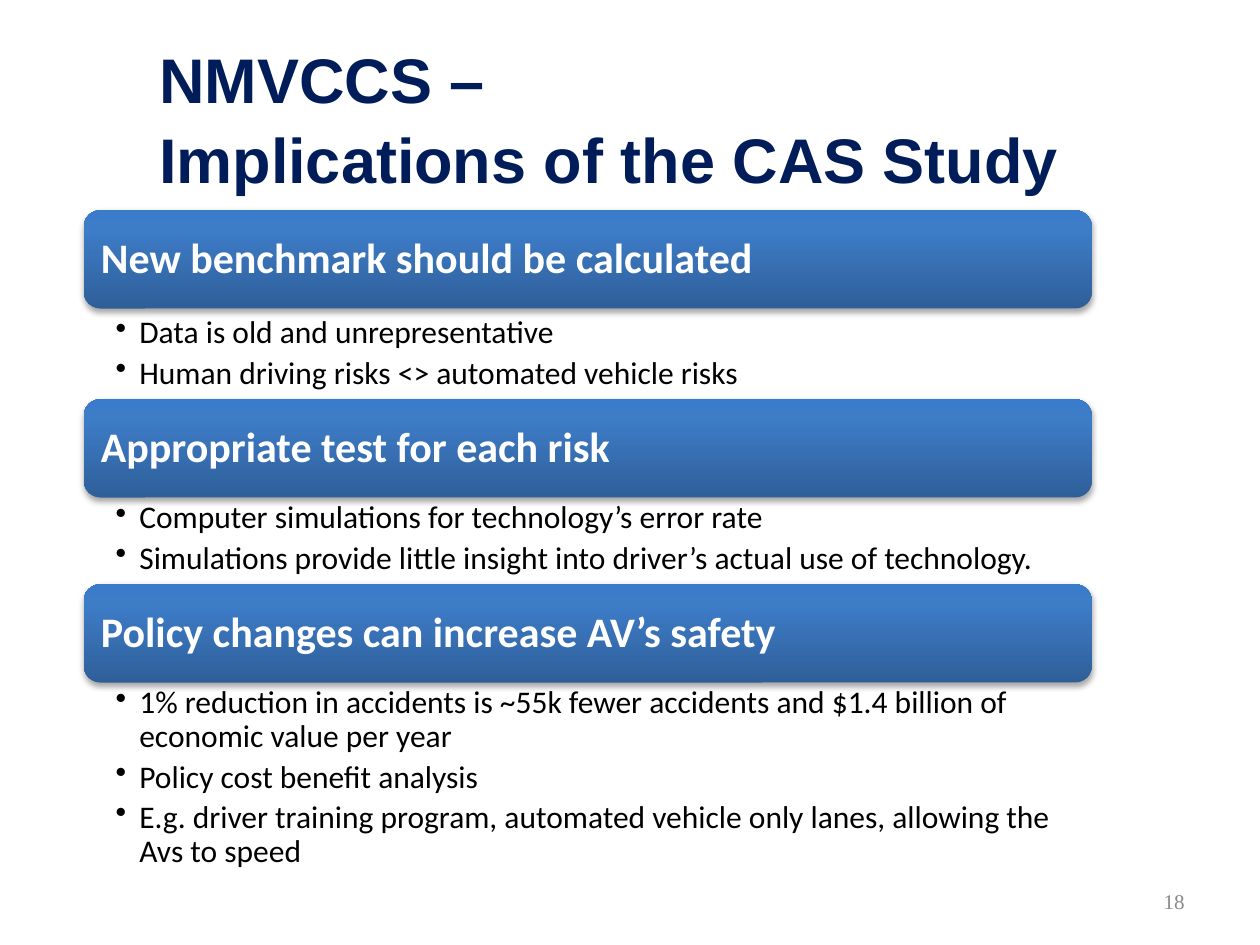
from lxml import etree
from pptx import Presentation
from pptx.dml.color import RGBColor
from pptx.enum.shapes import MSO_SHAPE as Shape
from pptx.enum.text import MSO_ANCHOR as Anchor, PP_ALIGN as Align
from pptx.oxml import parse_xml
from pptx.oxml.ns import nsdecls, qn
from pptx.util import Cm, Pt

BAR_HEIGHT = 1.98
FIRST_GAP = 0.08
STOPS = [(0, "2F5F99"), (80, "3D7CC7"), (100, "3A7CCB")]
SECTIONS = [
    ("New benchmark should be calculated", 1.75, [
        "Data is old and unrepresentative",
        "Human driving risks <> automated vehicle risks",
    ]),
    ("Appropriate test for each risk", 1.75, [
        "Computer simulations for technology’s error rate",
        "Simulations provide little insight into driver’s actual use of technology.",
    ]),
    ("Policy changes can increase AV’s safety", 3.94, [
        "1% reduction in accidents is ~55k fewer accidents and $1.4 billion of economic value per year",
        "Policy cost benefit analysis",
        "E.g. driver training program, automated vehicle only lanes, allowing the Avs to speed",
    ]),
]


def color(hex_value):
    return RGBColor.from_string(hex_value)


def set_font(paragraph, family, size, hex_value, bold=False):
    for run in paragraph.runs:
        run.font.name = family
        run.font.size = Pt(size)
        run.font.bold = bold
        run.font.color.rgb = color(hex_value)


def set_frame(frame, anchor, left, top, right, bottom):
    frame.word_wrap = True
    frame.vertical_anchor = anchor
    frame.margin_left, frame.margin_top = Cm(left), Cm(top)
    frame.margin_right, frame.margin_bottom = Cm(right), Cm(bottom)


def add_text(slide, left, top, width, height):
    return slide.shapes.add_textbox(Cm(left), Cm(top), Cm(width), Cm(height)).text_frame


def add_title(slide, left, top, width, height):
    title = add_text(slide, left, top, width, height)
    set_frame(title, Anchor.MIDDLE, 0.25, 0.13, 0.25, 0.13)
    title.text = "NMVCCS –\vImplications of the CAS Study"
    title.paragraphs[0].line_spacing = 1.05
    set_font(title.paragraphs[0], "Arial", 36, "001C59", True)


def add_bar(slide, heading, left, top, width, height):
    bar = slide.shapes.add_shape(
        Shape.ROUNDED_RECTANGLE, Cm(left), Cm(top), Cm(width), Cm(height))
    stops = "".join(
        f'<a:gs pos="{position * 1000}"><a:srgbClr val="{value}"/></a:gs>'
        for position, value in STOPS)
    bar._element.spPr.append(parse_xml(
        f'<a:gradFill {nsdecls("a")} rotWithShape="1"><a:gsLst>{stops}</a:gsLst>'
        '<a:lin ang="16200000" scaled="0"/></a:gradFill>'))
    bar.line.fill.background()
    bar.shadow.inherit = False
    bar._element.spPr.find(qn("a:effectLst")).append(parse_xml(
        f'<a:outerShdw {nsdecls("a")} blurRad="40000" dist="23000" dir="5400000" '
        'rotWithShape="0"><a:srgbClr val="000000"><a:alpha val="35000"/>'
        '</a:srgbClr></a:outerShdw>'))
    set_frame(bar.text_frame, Anchor.MIDDLE, 0.25, 0.25, 0.25, 0.25)
    bar.text_frame.text = heading
    label = bar.text_frame.paragraphs[0]
    label.alignment = Align.LEFT
    label.line_spacing = 0.9
    set_font(label, "Calibri", 24, "FFFFFF", True)


def add_points(slide, points, left, top, width, height):
    body = add_text(slide, left, top, width, height)
    set_frame(body, Anchor.TOP, 0.64, 0.08, 0.36, 0.08)
    body.text = "\n".join(points)
    for point in body.paragraphs:
        properties = point._p.get_or_add_pPr()
        properties.set("marL", str(Cm(0.48)))
        properties.set("indent", str(-Cm(0.48)))
        etree.SubElement(properties, qn("a:buChar"), char="•")
        point.line_spacing = 0.9
        point.space_after = Pt(3.6)
        set_font(point, "Calibri", 18, "000000")


def add_sections(slide, left, top, width):
    for index, (heading, body_height, points) in enumerate(SECTIONS):
        add_bar(slide, heading, left, top, width, BAR_HEIGHT)
        top += BAR_HEIGHT + (FIRST_GAP if index == 0 else 0)
        add_points(slide, points, left, top, width, body_height)
        top += body_height


def add_page_number(slide, left, top, width, height):
    number = add_text(slide, left, top, width, height)
    set_frame(number, Anchor.MIDDLE, 0.25, 0.13, 0.25, 0.13)
    number.text = "18"
    number.paragraphs[0].alignment = Align.RIGHT
    set_font(number.paragraphs[0], "Times New Roman", 12, "898989")


def main():
    deck = Presentation()
    deck.slide_width, deck.slide_height = Cm(25.4), Cm(19.05)
    slide = deck.slides.add_slide(deck.slide_layouts[6])
    add_title(slide, 2.96, 0.76, 22.44, 3.18)
    add_sections(slide, 1.69, 4.24, 20.32)
    add_page_number(slide, 18.2, 17.66, 5.93, 1.01)
    deck.save("out.pptx")


if __name__ == "__main__":
    main()
